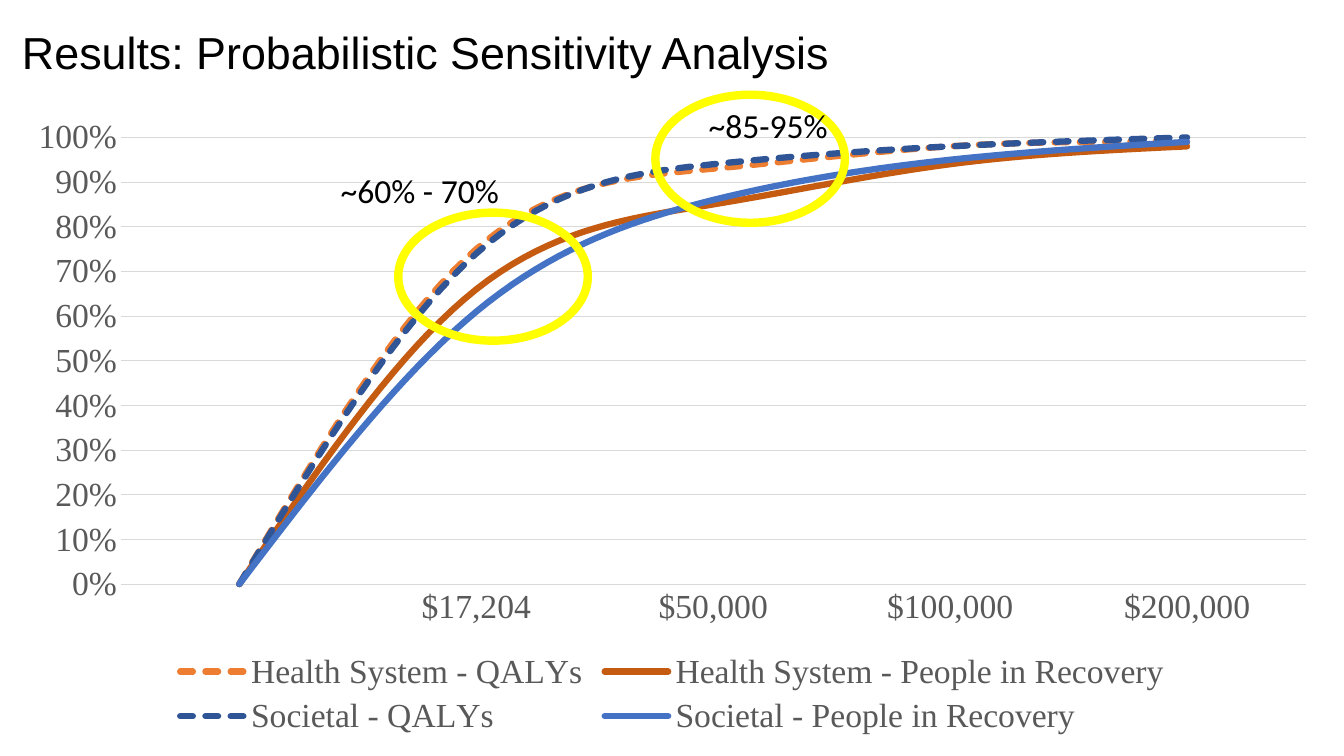
from pptx import Presentation
from pptx.chart.data import CategoryChartData
from pptx.dml.color import RGBColor
from pptx.enum.chart import XL_CHART_TYPE, XL_LEGEND_POSITION, XL_MARKER_STYLE, XL_TICK_MARK
from pptx.enum.dml import MSO_LINE
from pptx.enum.shapes import MSO_SHAPE
from pptx.enum.text import MSO_ANCHOR
from pptx.util import Inches, Pt

BLACK = RGBColor(0x00, 0x00, 0x00)
GRAY = RGBColor(0x59, 0x59, 0x59)
GRID = RGBColor(0xD9, 0xD9, 0xD9)
YELLOW = RGBColor(0xFF, 0xFF, 0x00)
ORANGE = RGBColor(0xED, 0x7D, 0x31)
RUST = RGBColor(0xC5, 0x5A, 0x11)
NAVY = RGBColor(0x2F, 0x55, 0x97)
BLUE = RGBColor(0x44, 0x72, 0xC4)

WIDTH, HEIGHT = Inches(13.33), Inches(7.5)
THRESHOLDS = ["", "$17,204", "$50,000", "$100,000", "$200,000"]
CURVES = [
    ("Health System - QALYs", (0, 0.75, 0.93, 0.98, 0.99), ORANGE, True),
    ("Health System - People in Recovery", (0, 0.66, 0.85, 0.94, 0.98), RUST, False),
    ("Societal - QALYs", (0, 0.74, 0.94, 0.98, 1), NAVY, True),
    ("Societal - People in Recovery", (0, 0.61, 0.86, 0.95, 0.99), BLUE, False),
]


def set_font(font, size, name, color):
    font.size, font.name = Pt(size), name
    font.color.rgb = color


def set_line(line, color, width):
    line.color.rgb = color
    line.width = Pt(width)


def add_text(s, text, box, size, name, anchor=MSO_ANCHOR.TOP, spacing=1.0):
    tf = s.shapes.add_textbox(*map(Inches, box)).text_frame
    tf.word_wrap = True
    tf.vertical_anchor = anchor
    p = tf.paragraphs[0]
    p.line_spacing = spacing
    r = p.add_run()
    r.text = text
    set_font(r.font, size, name, BLACK)


def add_ring(s, left, top):
    sp = s.shapes.add_shape(MSO_SHAPE.OVAL, Inches(left), Inches(top), Inches(1.88), Inches(1.27))
    sp.shadow.inherit = False
    sp.fill.background()
    set_line(sp.line, YELLOW, 6)


def style_axes(chart):
    for axis in (chart.category_axis, chart.value_axis):
        axis.major_tick_mark = axis.minor_tick_mark = XL_TICK_MARK.NONE
        set_font(axis.tick_labels.font, 24, "Times New Roman", GRAY)
    set_line(chart.category_axis.format.line, GRID, 0.75)
    values = chart.value_axis
    values.minimum_scale, values.maximum_scale, values.major_unit = 0, 1, 0.1
    values.tick_labels.number_format = "0%"
    values.tick_labels.number_format_is_linked = False
    values.format.line.fill.background()
    set_line(values.major_gridlines.format.line, GRID, 0.75)


def add_curves(s):
    data = CategoryChartData(number_format="0%")
    data.categories = THRESHOLDS
    for name, values, _, _ in CURVES:
        data.add_series(name, values)
    box = map(Inches, (0.12, 1.05, 13.09, 6.31))
    chart = s.shapes.add_chart(XL_CHART_TYPE.LINE, *box, data).chart
    set_font(chart.font, 24, "Times New Roman", BLACK)
    chart.has_title = False
    chart.has_legend = True
    chart.legend.position = XL_LEGEND_POSITION.BOTTOM
    chart.legend.include_in_layout = False
    set_font(chart.legend.font, 24, "Times New Roman", GRAY)
    style_axes(chart)
    plot = chart.plots[0]
    plot.vary_by_categories = False
    for series, (_, _, color, dashed) in zip(plot.series, CURVES):
        series.smooth = True
        series.marker.style = XL_MARKER_STYLE.NONE
        set_line(series.format.line, color, 4.5)
        if dashed:
            series.format.line.dash_style = MSO_LINE.SQUARE_DOT
    for ln in chart._chartSpace.xpath(".//c:ser/c:spPr/a:ln"):
        ln.set("cap", "rnd")


def main():
    prs = Presentation()
    prs.slide_width, prs.slide_height = WIDTH, HEIGHT
    s = prs.slides.add_slide(prs.slide_layouts[6])
    add_curves(s)
    add_text(s, "Results: Probabilistic Sensitivity Analysis", (0.12, -0.11, 12.66, 1.31),
             32, "Arial", MSO_ANCHOR.MIDDLE, 0.9)
    add_ring(s, 3.95, 2.11)
    add_ring(s, 6.5, 0.94)
    add_text(s, "~60% - 70%", (3.28, 1.64, 2.04, 0.5), 24, "Calibri")
    add_text(s, "~85-95%", (6.93, 0.99, 1.55, 0.5), 24, "Calibri")
    prs.save("out.pptx")


if __name__ == "__main__":
    main()
